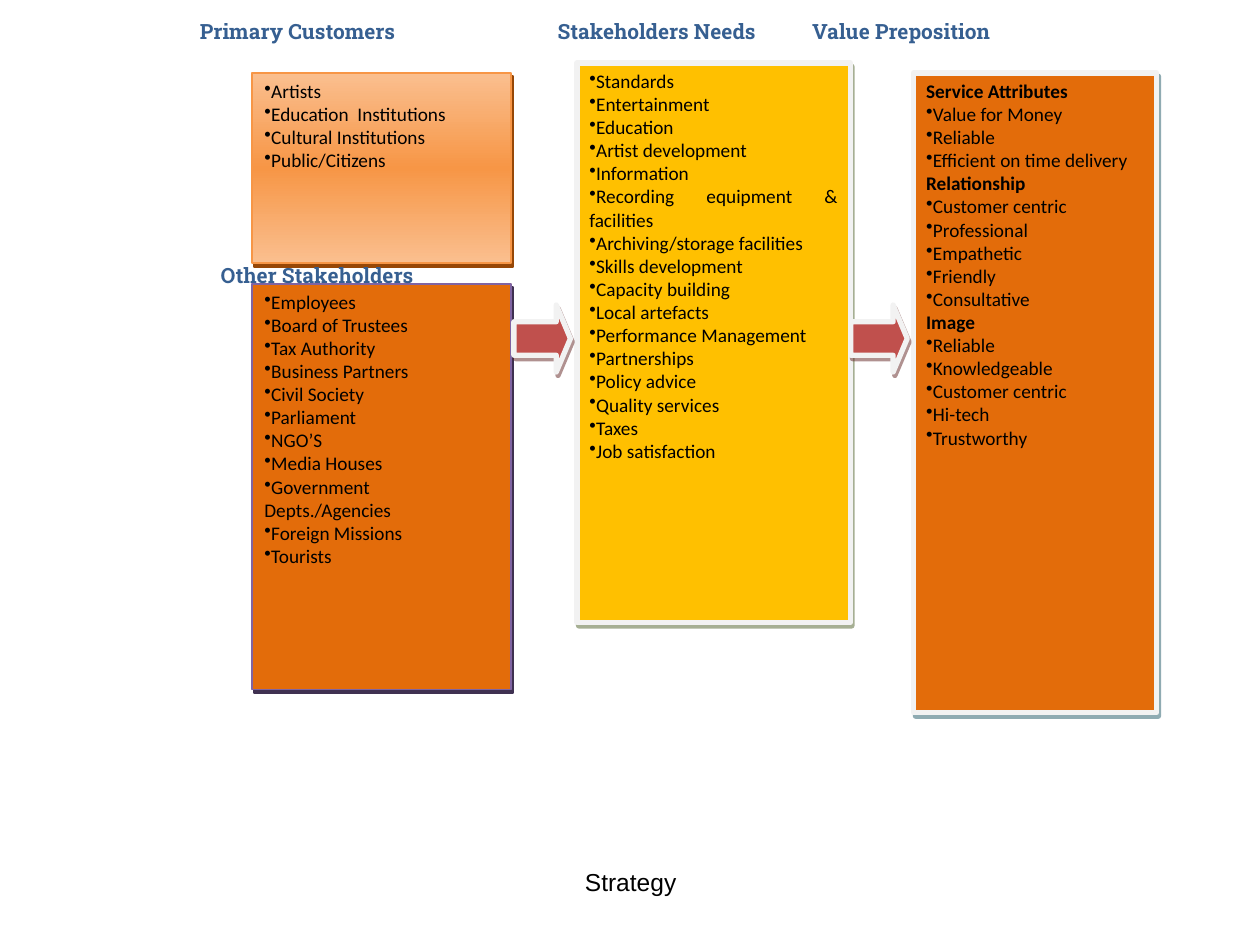
import copy
from dataclasses import dataclass

import lxml.etree
import pptx
import pptx.dml.color
import pptx.enum.shapes
import pptx.enum.text
import pptx.oxml.ns
import pptx.util

Cm = pptx.util.Cm
Pt = pptx.util.Pt
qn = pptx.oxml.ns.qn
ALIGN = pptx.enum.text.PP_ALIGN
ANCHOR = pptx.enum.text.MSO_ANCHOR
SHAPE = pptx.enum.shapes.MSO_SHAPE


@dataclass(frozen=True)
class Theme:
    text: str = "000000"
    heading: str = "365F91"
    orange: str = "E36C0A"
    gold: str = "FFC000"
    red: str = "C0504D"
    peach: str = "FABF8F"
    tangerine: str = "F79646"
    purple: str = "8064A2"
    pale: str = "F2F2F2"
    title_font: str = "Arial"
    list_font: str = "Calibri"
    heading_font: str = "Roboto Slab"
    title_size: int = 14
    heading_size: int = 12
    list_size: int = 11


THEME = Theme()

PRIMARY_CUSTOMERS = [
    "Artists", "Education  Institutions", "Cultural Institutions", "Public/Citizens",
]
OTHER_STAKEHOLDERS = [
    "Employees", "Board of Trustees", "Tax Authority", "Business Partners",
    "Civil Society", "Parliament", "NGO’S", "Media Houses",
    "Government Depts./Agencies", "Foreign Missions", "Tourists",
]
NEEDS = [
    "Standards", "Entertainment", "Education", "Artist development", "Information",
    "Recording equipment & facilities", "Archiving/storage facilities",
    "Skills development", "Capacity building", "Local artefacts",
    "Performance Management", "Partnerships", "Policy advice", "Quality services",
    "Taxes", "Job satisfaction",
]
VALUES = {
    "Service Attributes": ["Value for Money", "Reliable", "Efficient on time delivery"],
    "Relationship": ["Customer centric", "Professional", "Empathetic", "Friendly",
                     "Consultative"],
    "Image": ["Reliable", "Knowledgeable", "Customer centric", "Hi-tech", "Trustworthy"],
}


def rgb(value):
    return pptx.dml.color.RGBColor.from_string(value)


def set_font(paragraph, name, size, color, bold=False):
    font = paragraph.font
    font.name, font.size, font.bold = name, Pt(size), bold
    font.color.rgb = rgb(color)


def add_bullet(paragraph):
    properties = paragraph._p.get_or_add_pPr()
    properties.set("marL", "0")
    properties.set("indent", "0")
    lxml.etree.SubElement(properties, qn("a:buChar")).set("char", "•")


def cast_shadow(shape, color, opacity):
    shape.shadow.inherit = False
    effects = shape._element.spPr.find(qn("a:effectLst"))
    shadow = lxml.etree.SubElement(effects, qn("a:outerShdw"))
    shadow.set("dist", str(Pt(2.2)))
    shadow.set("dir", str(63 * 60000))
    shadow.set("rotWithShape", "0")
    tint = lxml.etree.SubElement(shadow, qn("a:srgbClr"))
    tint.set("val", color)
    lxml.etree.SubElement(tint, qn("a:alpha")).set("val", str(opacity * 1000))


def fill_gradient(shape, colors):
    shape.fill.gradient()
    shape.fill.gradient_angle = 270
    stops = shape._element.spPr.find(qn("a:gradFill")).find(qn("a:gsLst"))
    stops.append(copy.deepcopy(stops[0]))
    for index, (stop, color) in enumerate(zip(shape.fill.gradient_stops, colors)):
        stop.position = index / (len(colors) - 1)
        stop.color.rgb = rgb(color)


def add_block(slide, kind, place, fill, outline, shadow):
    block = slide.shapes.add_shape(kind, *map(Cm, place))
    if isinstance(fill, str):
        block.fill.solid()
        block.fill.fore_color.rgb = rgb(fill)
    else:
        fill_gradient(block, fill)
    color, width = outline
    block.line.color.rgb = rgb(color)
    block.line.width = Pt(width)
    cast_shadow(block, *shadow)
    return block


def add_list(block, entries, align):
    frame = block.text_frame
    frame.word_wrap = True
    frame.vertical_anchor = ANCHOR.TOP
    for index, (entry, is_group) in enumerate(entries):
        paragraph = frame.add_paragraph() if index else frame.paragraphs[0]
        paragraph.text = entry
        paragraph.alignment = align
        if not is_group:
            add_bullet(paragraph)
        set_font(paragraph, THEME.list_font, THEME.list_size, THEME.text, is_group)


def add_heading(slide, text, left, top):
    frame = slide.shapes.add_textbox(Cm(left), Cm(top), Cm(5.3), Cm(0.76)).text_frame
    frame.margin_left = frame.margin_right = 0
    frame.word_wrap = True
    frame.vertical_anchor = ANCHOR.MIDDLE
    heading = frame.paragraphs[0]
    heading.text = text
    set_font(heading, THEME.heading_font, THEME.heading_size, THEME.heading, True)


def place_title(slide, text):
    title = slide.shapes.title
    title.left, title.top, title.width, title.height = map(Cm, (8.69, 17.35, 8.05, 1.32))
    frame = title.text_frame
    frame.auto_size = pptx.enum.text.MSO_AUTO_SIZE.NONE
    frame.vertical_anchor = ANCHOR.TOP
    frame.text = text
    frame.paragraphs[0].alignment = ALIGN.CENTER
    set_font(frame.paragraphs[0], THEME.title_font, THEME.title_size, THEME.text)


def main():
    deck = pptx.Presentation()
    deck.slide_width, deck.slide_height = Cm(25.4), Cm(19.05)
    slide = deck.slides.add_slide(deck.slide_layouts[5])
    place_title(slide, "Strategy")

    frame_line = (THEME.pale, 3)
    customer_fill = (THEME.peach, THEME.tangerine, THEME.peach)
    value_entries = []
    for group, members in VALUES.items():
        value_entries.append((group, True))
        value_entries += [(member, False) for member in members]

    columns = [
        ((5.08, 1.47, 5.23, 3.84), customer_fill, (THEME.tangerine, 1), ("974706", 100),
         [(entry, False) for entry in PRIMARY_CUSTOMERS], ALIGN.JUSTIFY),
        ((11.63, 1.27, 5.51, 11.28), THEME.gold, frame_line, ("4E6128", 50),
         [(entry, False) for entry in NEEDS], ALIGN.JUSTIFY),
        ((18.42, 1.47, 4.9, 12.9), THEME.orange, frame_line, ("205867", 50),
         value_entries, ALIGN.LEFT),
        ((5.08, 5.72, 5.23, 8.18), THEME.orange, (THEME.purple, 1), ("3F3151", 100),
         [(entry, False) for entry in OTHER_STAKEHOLDERS], ALIGN.JUSTIFY),
    ]
    for place, fill, outline, shadow, entries, align in columns:
        block = add_block(slide, SHAPE.RECTANGLE, place, fill, outline, shadow)
        add_list(block, entries, align)

    for left in (10.36, 17.15):
        arrow = add_block(slide, SHAPE.RIGHT_ARROW, (left, 6.15, 1.14, 1.35),
                          THEME.red, frame_line, ("622423", 50))
        arrow.adjustments[0], arrow.adjustments[1] = 0.5, 0.25

    for text, left, top in (
        ("Primary Customers", 4.03, 0.25),
        ("Stakeholders Needs", 11.24, 0.25),
        ("Value Preposition", 16.37, 0.25),
        ("Other Stakeholders", 4.45, 5.17),
    ):
        add_heading(slide, text, left, top)

    deck.save("out.pptx")


if __name__ == "__main__":
    main()
